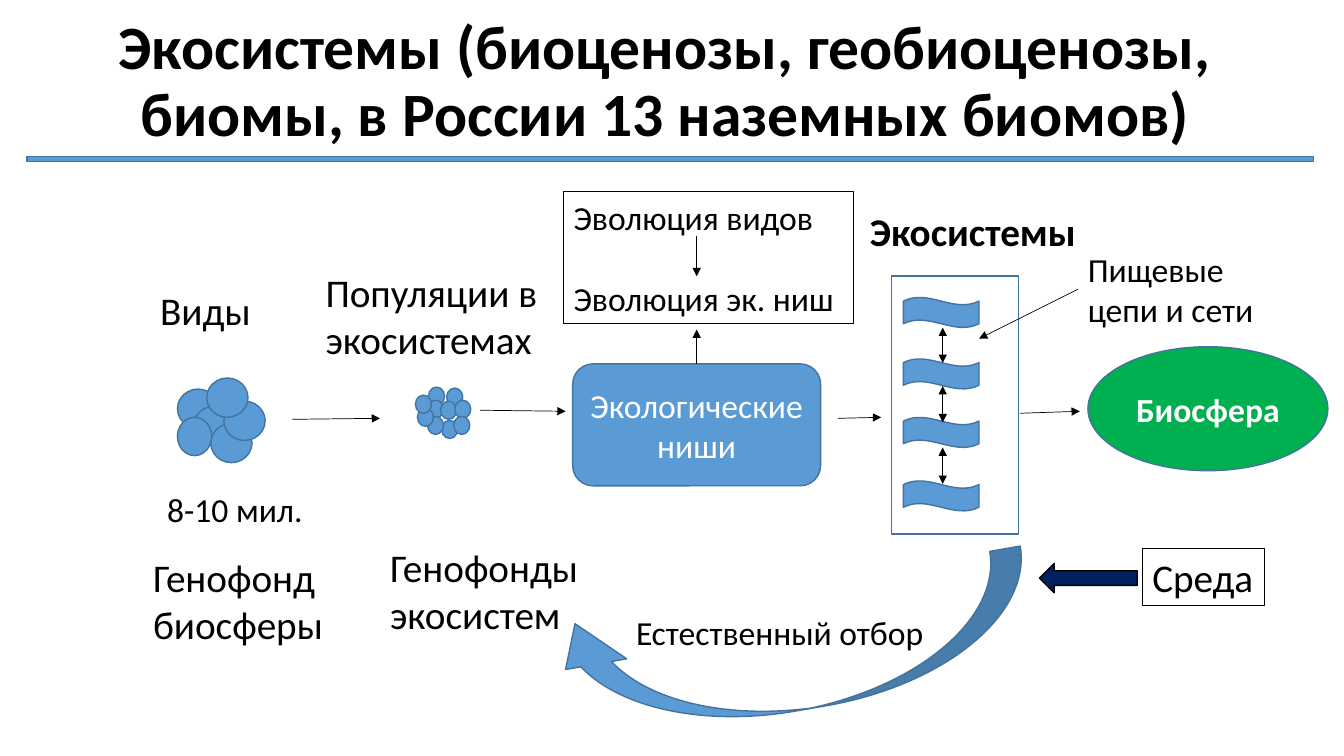
"""Build a slide showing how species, niches and ecosystems form the biosphere."""
from lxml import etree
from pptx import Presentation, util as u
from pptx.dml.color import RGBColor
from pptx.enum import shapes, text
from pptx.oxml.ns import qn

KIND = shapes.MSO_SHAPE
BLUE, EDGE, BLACK, WHITE = "5B9BD5", "43739E", "000000", "FFFFFF"

deck = Presentation()
deck.slide_width, deck.slide_height = u.Inches(13.33), u.Inches(7.5)
slide = deck.slides.add_slide(deck.slide_layouts[6])


def paint(part, hue):
    """Give a fill, line or font a solid colour."""
    if hasattr(part, "solid"):
        part.solid()
        part = part.fore_color
    else:
        part = part.color
    part.rgb = RGBColor.from_string(hue)


def put(kind, box, fill=None, edge=EDGE, wide=1, words="", hue=BLACK, wrap=True, mid=False, **form):
    """Add a shape, or a text box when there is no kind."""
    area = [u.Inches(n) for n in box]
    if kind is None:
        item = slide.shapes.add_textbox(*area)
    else:
        item = slide.shapes.add_shape(kind, *area)
        item.shadow.inherit = False
        paint(item.line, edge)
        item.line.width = u.Pt(wide)
        if fill:
            paint(item.fill, fill)
        else:
            item.fill.background()
    if words:
        frame = item.text_frame
        frame.word_wrap = wrap
        frame.vertical_anchor = text.MSO_ANCHOR.MIDDLE if mid else text.MSO_ANCHOR.TOP
        frame.text = words
        for para in frame.paragraphs:
            para.alignment = text.PP_ALIGN.CENTER if mid else text.PP_ALIGN.LEFT
            paint(para.font, hue)
            for key, val in {"name": "Calibri", **form}.items():
                setattr(para.font, key, val)
    return item


BIG, SMALL = u.Pt(28), u.Pt(24)

put(KIND.RECTANGLE, (8.84, 2.74, 1.26, 2.56), WHITE)
title = put(None, (0.85, 0.1, 11.5, 1.45), mid=True, size=u.Pt(44), bold=True,
            words="Экосистемы (биоценозы, геобиоценозы, биомы, в России 13 наземных биомов)")
title.text_frame.paragraphs[0].line_spacing = 0.9
put(KIND.RECTANGLE, (0.27, 1.55, 12.76, 0.05), BLUE)

labels = [
    ("Виды", (1.49, 2.79, 1.11, 0.57), BIG, False, False),
    ("8-10 мил.", (1.56, 4.8, 1.56, 0.5), SMALL, False, False),
    ("Популяции в экосистемах", (3.13, 2.61, 2.32, 1.04), BIG, True, False),
    ("Генофонд биосферы", (1.42, 5.44, 1.91, 1.04), BIG, True, False),
    ("Генофонды экосистем", (3.77, 5.34, 2.11, 1.04), BIG, True, False),
    ("Экосистемы", (8.53, 2.01, 2.27, 0.57), BIG, False, True),
    ("Пищевые цепи и сети", (10.69, 2.42, 2.08, 0.91), SMALL, True, False),
]
for words, box, size, wrap, bold in labels:
    put(None, box, words=words, size=size, wrap=wrap, bold=bold)

species = [(1.76, 3.86), (1.92, 4.03), (2.09, 4.2), (2.22, 3.98), (2.05, 3.75)]
for spot in species:
    put(KIND.OVAL, (*spot, 0.41, 0.39), BLUE)
put(KIND.OVAL, (1.76, 4.14, 0.34, 0.38), BLUE)

groups = [(4.25, 3.84), (4.43, 3.85), (4.38, 4.17), (4.24, 3.97), (4.37, 3.98),
          (4.24, 4.13), (4.51, 3.97), (4.5, 4.13), (4.14, 4.05), (4.12, 3.92)]
for spot in groups:
    put(KIND.OVAL, (*spot, 0.16, 0.18), BLUE)

for top in (2.95, 3.56, 4.14, 4.77):
    put(KIND.WAVE, (8.96, top, 0.75, 0.3), BLUE)

niche = put(KIND.ROUNDED_RECTANGLE, (5.68, 3.61, 2.46, 1.21), BLUE,
            words="Экологические ниши", hue=WHITE, mid=True, size=SMALL)
change = put(KIND.RECTANGLE, (5.59, 1.9, 2.88, 1.31), edge=BLACK, wide=0.75,
             words="Эволюция видов\nЭволюция эк. ниш", wrap=False, size=SMALL)
change.text_frame.paragraphs[1].space_before = u.Pt(29)
put(KIND.OVAL, (10.79, 3.44, 2.38, 1.23), "00B050",
    words="Биосфера", hue=WHITE, mid=True, size=SMALL, bold=True)
put(KIND.RECTANGLE, (11.33, 5.44, 1.21, 0.57), edge=BLACK, wide=0.75,
    words="Среда", wrap=False, size=BIG)

arrows = [
    (9.35, 3.25, 9.35, 3.6, True, None),
    (9.35, 3.83, 9.35, 4.19, True, None),
    (9.35, 4.44, 9.35, 4.8, True, None),
    (2.9, 4.16, 3.77, 4.15, False, None),
    (4.76, 4.07, 5.61, 4.08, False, None),
    (8.31, 4.15, 8.74, 4.14, False, None),
    (6.91, 3.61, 6.91, 3.27, False, niche),
    (6.91, 2.34, 6.91, 2.74, False, None),
    (10.69, 2.87, 9.71, 3.36, False, None),
    (10.12, 4.1, 10.71, 4.08, False, None),
]
for *ends, both, start in arrows:
    link = slide.shapes.add_connector(shapes.MSO_CONNECTOR.STRAIGHT, *[u.Inches(n) for n in ends])
    if start:
        link.begin_connect(start, 0)
    paint(link.line, BLACK)
    link.line.width = u.Pt(0.5)
    line = link.line._get_or_add_ln()
    for tip in ("a:headEnd", "a:tailEnd") if both else ("a:tailEnd",):
        etree.SubElement(line, qn(tip), type="triangle")
    etree.SubElement(link._element.spPr, qn("a:effectLst"))

curve = put(KIND.CURVED_LEFT_ARROW, (7.25, 4.04, 1.23, 4.79), BLUE)
curve.rotation = 80.1
for n, val in enumerate((0.25, 0.5, 0.351)):
    curve.adjustments[n] = val
put(None, (6.21, 6.02, 3.08, 0.5), words="Естественный отбор", wrap=False, size=SMALL)
put(KIND.LEFT_ARROW, (10.31, 5.59, 0.97, 0.29), "002060", BLACK)

deck.save("out.pptx")
